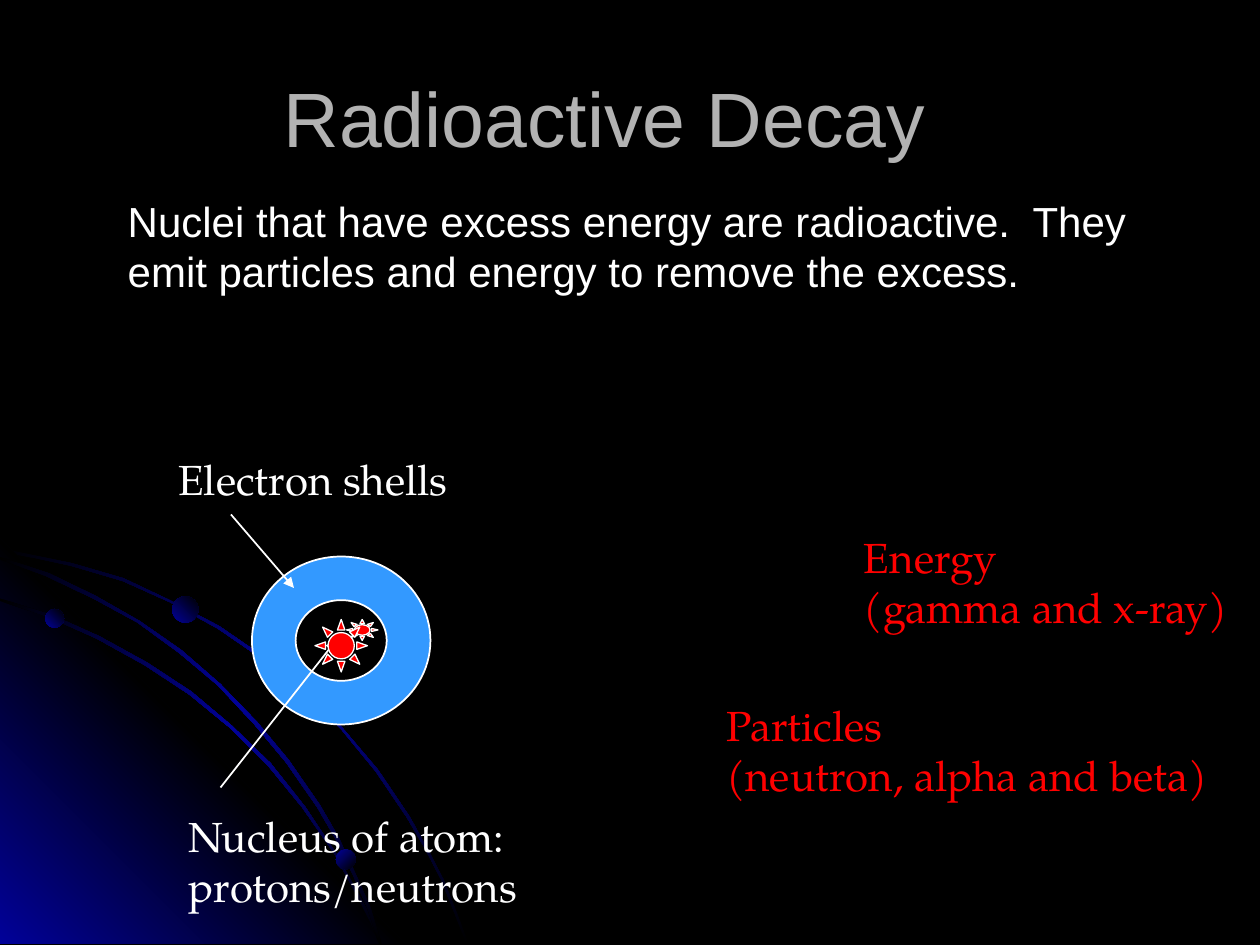
from dataclasses import dataclass

from lxml.etree import SubElement
from pptx import Presentation
from pptx.dml.color import RGBColor
from pptx.enum.shapes import MSO_CONNECTOR, MSO_SHAPE
from pptx.enum.text import MSO_ANCHOR, MSO_AUTO_SIZE, PP_ALIGN
from pptx.oxml.ns import qn
from pptx.util import Emu, Inches, Pt

COLORS = {
    "black": "000000",
    "navy": "010199",
    "gray": "B2B2B2",
    "white": "FFFFFF",
    "blue": "3399FF",
    "red": "FF0000",
    "cream": "FFFFCC",
}
COLUMNS, ROWS = 120, 90
HEADING_FONT, LABEL_FONT = "Arial", "TeX Gyre Pagella"
HUNDREDTH_INCH = Inches(0.01)

ARC_STOPS = ((0, "black"), (50, "navy"), (100, "black"))
CORNER_STOPS = ((0, "navy"), (50, "black"), (100, "navy"))
BALL_STOPS = ((0, "navy"), (100, "black"))


@dataclass(frozen=True)
class Box:
    column: float
    row: float
    width: float
    height: float


@dataclass(frozen=True)
class Label:
    box: Box
    paragraphs: tuple[str, ...]
    color: str
    wrap: bool = False


@dataclass(frozen=True)
class Ball:
    box: Box
    angle: int


@dataclass(frozen=True)
class Part:
    preset: MSO_SHAPE
    box: Box
    adjustment: float
    color: str
    line_width: float


@dataclass(frozen=True)
class Pointer:
    start: tuple[float, float]
    end: tuple[float, float]


CORNER = [(322, 749), (0, 749), (0, 427)]
OUTER_ARC = [
    (57, 447), (28, 441), (0, 435), (0, 438), (28, 443), (56, 449), (97, 461),
    (135, 478), (173, 499), (208, 523), (241, 549), (271, 579), (298, 612),
    (323, 649), (337, 673), (350, 698), (360, 723), (370, 749), (372, 749),
    (362, 723), (352, 698), (339, 673), (325, 648), (300, 611), (272, 578),
    (242, 548), (209, 521), (174, 497), (136, 477), (98, 459),
]
INNER_ARC = [
    (285, 714), (294, 732), (301, 749), (303, 749), (296, 730), (286, 712),
    (266, 676), (242, 640), (215, 606), (184, 576), (152, 549), (117, 526),
    (79, 505), (41, 488), (0, 475), (0, 477), (39, 490), (77, 507), (115, 528),
    (150, 551), (183, 578), (213, 608), (240, 641), (265, 677),
]
MIDDLE_ARC = [
    (0, 442), (0, 444), (36, 457), (74, 475), (109, 494), (142, 518), (173, 544),
    (202, 575), (227, 605), (252, 641), (267, 667), (280, 694), (292, 722),
    (301, 749), (303, 749), (294, 720), (282, 693), (269, 665), (254, 639),
    (229, 603), (204, 573), (175, 543), (144, 516), (111, 493), (76, 473), (39, 455),
]
SWOOSHES = (
    (OUTER_ARC, ARC_STOPS, 315),
    (CORNER, CORNER_STOPS, 45),
    (INNER_ARC, ARC_STOPS, 315),
    (MIDDLE_ARC, ARC_STOPS, 315),
)
BALLS = (
    Ball(Box(4.3, 58, 1.8, 1.8), 45),
    Ball(Box(32, 80.9, 1.9, 1.9), 315),
    Ball(Box(16.4, 56.8, 2.5, 2.5), 45),
)
SHELLS = Part(MSO_SHAPE.DONUT, Box(24, 53, 17, 16), 0.26, "blue", 1)
NUCLEUS = (
    Part(MSO_SHAPE.SUN, Box(33, 59, 3, 2), 0.25, "red", 0.75),
    Part(MSO_SHAPE.SUN, Box(30, 59, 5, 5), 0.25, "red", 0.75),
)
POINTERS = (Pointer((21, 75), (32, 61)), Pointer((22, 49), (28, 56)))
LABELS = (
    Label(Box(16.8, 76.6, 34.3, 10.8), ("Nucleus of atom:", "protons/neutrons"), "white"),
    Label(Box(15.8, 42.6, 28.1, 6), ("Electron shells",), "white"),
    Label(Box(81.1, 50, 38.9, 10.8), ("Energy\v(gamma and x-ray)",), "red", True),
    Label(Box(68, 66, 49.8, 10.8), ("Particles\v(neutron, alpha and beta)",), "red"),
)

presentation = Presentation()
presentation.slide_width, presentation.slide_height = Inches(10), Inches(7.5)


def rgb(name: str) -> RGBColor:
    return RGBColor.from_string(COLORS[name])


def position(column: float, row: float) -> tuple[Emu, Emu]:
    return (Emu(round(presentation.slide_width * column / COLUMNS)),
            Emu(round(presentation.slide_height * row / ROWS)))


def frame(box: Box) -> tuple[Emu, ...]:
    return position(box.column, box.row) + position(box.width, box.height)


def write(text_frame, *paragraphs: str, size=24, font=LABEL_FONT, color="white",
          align=PP_ALIGN.LEFT, anchor=MSO_ANCHOR.TOP, wrap=True,
          auto_size=MSO_AUTO_SIZE.NONE) -> None:
    text_frame.text = "\n".join(paragraphs)
    text_frame.word_wrap = wrap
    text_frame.auto_size = auto_size
    text_frame.vertical_anchor = anchor
    for paragraph in text_frame.paragraphs:
        paragraph.alignment = align
        paragraph.space_before = Pt(0)
        for run in paragraph.runs:
            run.font.size, run.font.name = Pt(size), font
            run.font.color.rgb = rgb(color)


def place(placeholder, box: Box) -> None:
    placeholder.left, placeholder.top, placeholder.width, placeholder.height = frame(box)


def indent_body(paragraph) -> None:
    properties = paragraph._p.get_or_add_pPr()
    properties.set("marL", str(Inches(0.38)))
    properties.set("indent", str(-Inches(0.38)))
    bullet_color = SubElement(properties, qn("a:buClr"))
    SubElement(bullet_color, qn("a:srgbClr"), val=COLORS["cream"])
    SubElement(properties, qn("a:buSzPct"), val="75000")
    SubElement(properties, qn("a:buChar"), char=" ")


def fill_gradient(shape, stops, angle: int) -> None:
    shape.shadow.inherit = False
    shape.line.fill.background()
    shape.fill.gradient()
    shape.fill.gradient_angle = angle
    stop_list = shape._element.spPr.find(".//" + qn("a:gsLst"))
    for stop in list(stop_list):
        stop_list.remove(stop)
    for percent, color in stops:
        stop = SubElement(stop_list, qn("a:gs"), pos=str(percent * 1000))
        SubElement(stop, qn("a:srgbClr"), val=COLORS[color])


def draw_swoosh(slide, points, stops, angle: int) -> None:
    builder = slide.shapes.build_freeform(*points[0], scale=HUNDREDTH_INCH)
    builder.add_line_segments(points[1:], close=True)
    fill_gradient(builder.convert_to_shape(), stops, angle)


def draw_ball(slide, ball: Ball) -> None:
    shape = slide.shapes.add_shape(MSO_SHAPE.OVAL, *frame(ball.box))
    fill_gradient(shape, BALL_STOPS, ball.angle)


def draw_part(slide, part: Part) -> None:
    shape = slide.shapes.add_shape(part.preset, *frame(part.box))
    shape.adjustments[0] = part.adjustment
    shape.shadow.inherit = False
    shape.fill.solid()
    shape.fill.fore_color.rgb = rgb(part.color)
    shape.line.color.rgb = rgb("white")
    shape.line.width = Pt(part.line_width)


def draw_pointer(slide, pointer: Pointer) -> None:
    connector = slide.shapes.add_connector(
        MSO_CONNECTOR.STRAIGHT, *position(*pointer.start), *position(*pointer.end))
    connector.line.color.rgb = rgb("white")
    connector.line.width = Pt(1)
    SubElement(connector.line._get_or_add_ln(), qn("a:tailEnd"), type="triangle")
    SubElement(connector._element.spPr, qn("a:effectLst"))


def draw_label(slide, label: Label) -> None:
    text_box = slide.shapes.add_textbox(*frame(label.box))
    write(text_box.text_frame, *label.paragraphs, color=label.color, wrap=label.wrap,
          auto_size=MSO_AUTO_SIZE.SHAPE_TO_FIT_TEXT)


def main() -> None:
    slide = presentation.slides.add_slide(presentation.slide_layouts[1])
    slide.background.fill.solid()
    slide.background.fill.fore_color.rgb = rgb("black")
    title, body = slide.placeholders
    place(title, Box(6, 3.6, 108, 15))
    write(title.text_frame, "Radioactive Decay\t", size=44, font=HEADING_FONT,
          color="gray", align=PP_ALIGN.CENTER, anchor=MSO_ANCHOR.MIDDLE)
    place(body, Box(6.4, 18, 107.6, 22))
    write(body.text_frame, "Nuclei that have excess energy are radioactive.  They emit "
          "particles and energy to remove the excess.", font=HEADING_FONT)
    indent_body(body.text_frame.paragraphs[0])
    for points, stops, angle in SWOOSHES:
        draw_swoosh(slide, points, stops, angle)
    for ball in BALLS:
        draw_ball(slide, ball)
    draw_part(slide, SHELLS)
    for pointer in POINTERS:
        draw_pointer(slide, pointer)
    for label in LABELS:
        draw_label(slide, label)
    for part in NUCLEUS:
        draw_part(slide, part)
    presentation.save("out.pptx")


if __name__ == "__main__":
    main()
